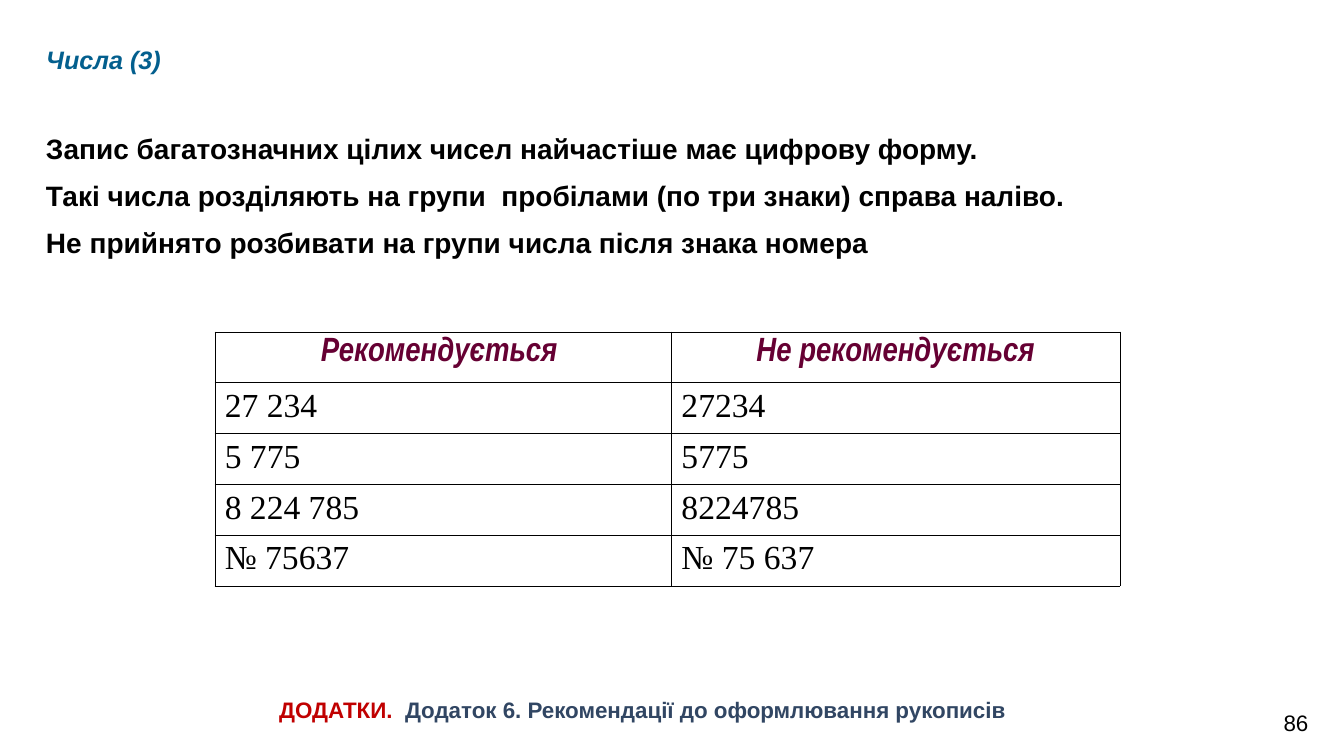
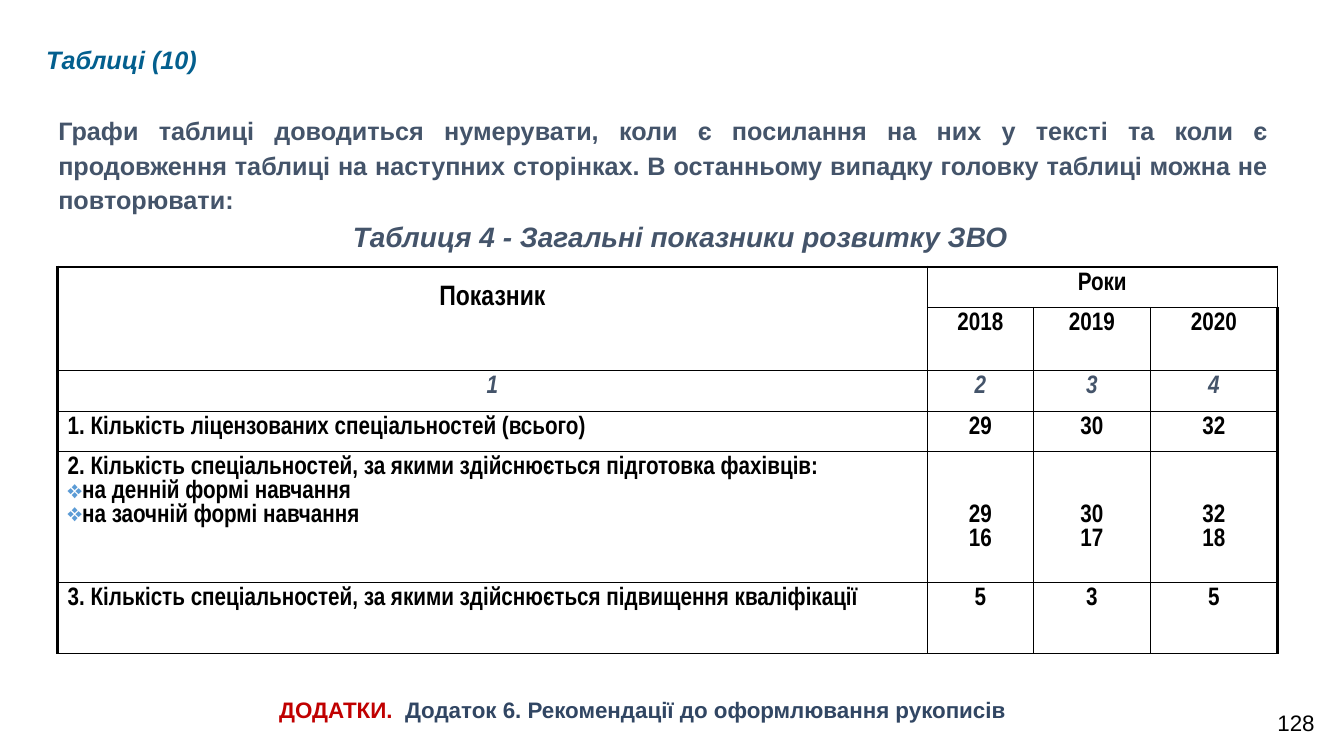
from dataclasses import dataclass

from lxml import etree
from pptx import Presentation
from pptx import util as u
from pptx.dml.color import RGBColor
from pptx.enum import text
from pptx.oxml import ns

Cm, Pt = u.Cm, u.Pt
LEFT, CENTER, JUSTIFY = text.PP_ALIGN.LEFT, text.PP_ALIGN.CENTER, text.PP_ALIGN.JUSTIFY
TOP, MIDDLE = text.MSO_ANCHOR.TOP, text.MSO_ANCHOR.MIDDLE


@dataclass(frozen=True)
class Theme:
    sans: str = "Arial"
    narrow: str = "Arial Narrow"
    serif: str = "Times New Roman"
    black: str = "000000"
    title: str = "035F8E"
    slate: str = "44546A"
    red: str = "C00000"
    navy: str = "314663"
    plum: str = "660033"
    bullet: str = "5B9BD5"
    small: int = 16
    normal: int = 18
    large: int = 20
    huge: int = 24


THEME = Theme()
BULLET = "❖"

FOOTER = [("ДОДАТКИ.  ", THEME.red),
          ("Додаток 6. Рекомендації до оформлювання рукописів", THEME.navy)]

NUMBERS = {
    "title": "Числа (3)",
    "page": "86",
    "rules": ["Запис багатозначних цілих чисел найчастіше має цифрову форму.",
              "Такі числа розділяють на групи  пробілами (по три знаки) справа наліво.",
              "Не прийнято розбивати на групи числа після знака номера"],
    "rows": [("Рекомендується ", "Не рекомендується"),
             ("27 234", "27234"),
             ("5 775", "5775"),
             ("8 224 785", "8224785"),
             ("№ 75637", "№ 75 637")],
    "widths": [11.51, 11.3],
    "heights": [1.28] * 5,
}

TABLES = {
    "title": "Таблиці (10)",
    "page": "128",
    "intro": "Графи таблиці доводиться нумерувати, коли є посилання на них у тексті "
             "та коли є продовження таблиці на наступних сторінках. "
             "В останньому випадку головку таблиці можна не повторювати:",
    "caption": "Таблиця 4 - Загальні показники розвитку ЗВО",
    "rows": [("Показник", "Роки", None, None),
             (None, "2018", "2019", "2020"),
             ("1", "2", "3", "4"),
             ("1. Кількість ліцензованих спеціальностей (всього)", "29", "30", "32"),
             ("2. Кількість спеціальностей, за якими здійснюється підготовка фахівців:\n"
              "❖на денній формі навчання\n❖на заочній формі навчання",
              "29\n16", "30\n17", "32\n18"),
             ("3. Кількість спеціальностей, за якими здійснюється підвищення кваліфікації",
              "5", "3", "5")],
    "widths": [21.92, 2.67, 2.95, 3.2],
    "heights": [1.02, 1.59, 1.02, 1.02, 3.3, 1.78],
}
INDEX_ROW, SPLIT_ROW = 2, 4


def add_bullet(paragraph):
    properties = paragraph._p.get_or_add_pPr()
    properties.set("marL", "0")
    properties.set("indent", "0")
    color = etree.SubElement(properties, ns.qn("a:buClr"))
    etree.SubElement(color, ns.qn("a:srgbClr"), val=THEME.bullet)
    etree.SubElement(properties, ns.qn("a:buChar"), char=BULLET)


def write(frame, paragraphs, size=THEME.normal, font=THEME.sans, color=THEME.black,
          bold=False, italic=False, align=LEFT, spacing=None):
    """Fill a frame; a paragraph is a string or a list of (text, colour) runs."""
    for number, content in enumerate(paragraphs):
        paragraph = frame.add_paragraph() if number else frame.paragraphs[0]
        runs = [(content, color)] if isinstance(content, str) else content
        if runs[0][0].startswith(BULLET):
            add_bullet(paragraph)
        paragraph.alignment = align
        if spacing:
            paragraph.line_spacing = spacing
        for words, run_color in runs:
            run = paragraph.add_run()
            run.text = words.removeprefix(BULLET)
            run.font.size, run.font.name = Pt(size), font
            run.font.bold, run.font.italic = bold, italic
            run.font.color.rgb = RGBColor.from_string(run_color)


def add_text(slide, box, paragraphs, anchor=TOP, **style):
    frame = slide.shapes.add_textbox(*map(Cm, box)).text_frame
    frame.word_wrap = True
    frame.vertical_anchor = anchor
    write(frame, paragraphs, **style)


def start_slide(presentation, content):
    """Add a slide with its title, footer and page number."""
    slide = presentation.slides.add_slide(presentation.slide_layouts[5])
    title = slide.shapes.title
    title.left, title.top, title.width, title.height = map(Cm, (0.91, 0.99, 32, 1.02))
    frame = title.text_frame
    frame.auto_size = text.MSO_AUTO_SIZE.NONE
    frame.vertical_anchor = TOP
    write(frame, [content["title"]], color=THEME.title, bold=True, italic=True)
    add_text(slide, (2.39, 17.42, 27.61, 0.94), [FOOTER], size=THEME.small,
             bold=True, align=CENTER)
    add_text(slide, (31.7, 17.75, 1.92, 0.94), [content["page"]], size=THEME.small,
             align=CENTER)
    return slide


def set_borders(cell, **widths):
    """Draw the sides L, R, T, B with the given widths in points."""
    properties = cell._tc.get_or_add_tcPr()
    for position, side in enumerate("LRTB"):
        line = etree.Element(ns.qn(f"a:ln{side}"), w=str(Pt(widths[side])))
        fill = etree.SubElement(line, ns.qn("a:solidFill"))
        etree.SubElement(fill, ns.qn("a:srgbClr"), val=THEME.black)
        properties.insert(position, line)


def add_grid(slide, left, top, content, inner, outer, style_of, merges=()):
    """Add a table; style_of(row, column) gives the text format of a cell."""
    rows, widths, heights = content["rows"], content["widths"], content["heights"]
    table = slide.shapes.add_table(len(rows), len(widths), Cm(left), Cm(top),
                                   Cm(sum(widths)), Cm(sum(heights))).table
    table.first_row = table.horz_banding = False
    for column, width in zip(table.columns, widths):
        column.width = Cm(width)
    for row, height in zip(table.rows, heights):
        row.height = Cm(height)
    for first, last in merges:
        table.cell(*first).merge(table.cell(*last))
    for r, row in enumerate(rows):
        for c, words in enumerate(row):
            cell = table.cell(r, c)
            cell.fill.background()
            set_borders(cell, L=inner if c else outer, T=inner if r else outer,
                        R=outer if c == len(widths) - 1 else inner, B=inner)
            if words is not None:
                write(cell.text_frame, words.split("\n"), **style_of(r, c))
    return table


def number_style(row, column):
    if row == 0:
        return dict(size=THEME.huge, font=THEME.narrow, color=THEME.plum,
                    bold=True, italic=True, align=CENTER)
    return dict(size=THEME.huge, font=THEME.serif)


def indicator_style(row, column):
    is_index = row == INDEX_ROW
    return dict(size=THEME.normal if row or column else THEME.large,
                font=THEME.narrow, bold=True, italic=is_index,
                color=THEME.slate if is_index else THEME.black,
                align=CENTER if column or row <= INDEX_ROW else LEFT)


def build_numbers(presentation):
    slide = start_slide(presentation, NUMBERS)
    add_text(slide, (0.91, 2.9, 31.8, 3.71), NUMBERS["rules"], anchor=MIDDLE,
             size=THEME.large, bold=True, spacing=1.4)
    add_grid(slide, 5.41, 8.36, NUMBERS, 0.25, 0.25, number_style)


def build_tables(presentation):
    slide = start_slide(presentation, TABLES)
    add_text(slide, (1.22, 2.64, 30.99, 2.92), [TABLES["intro"]], anchor=MIDDLE,
             color=THEME.slate, bold=True, align=JUSTIFY, spacing=1.15)
    add_text(slide, (5.74, 5.41, 22.81, 1.07), [TABLES["caption"]], anchor=MIDDLE,
             size=THEME.large, color=THEME.slate, bold=True, italic=True, align=CENTER)
    table = add_grid(slide, 1.45, 6.73, TABLES, 1, 2.25, indicator_style,
                     merges=[((0, 0), (1, 0)), ((0, 1), (0, 3))])
    table.cell(0, 0).margin_top = Cm(0.45)
    for column in range(1, len(TABLES["widths"])):
        table.cell(SPLIT_ROW, column).margin_top = Cm(1.33)


def main():
    presentation = Presentation()
    presentation.slide_width, presentation.slide_height = Cm(33.87), Cm(19.05)
    build_numbers(presentation)
    build_tables(presentation)
    presentation.save("out.pptx")


if __name__ == "__main__":
    main()
